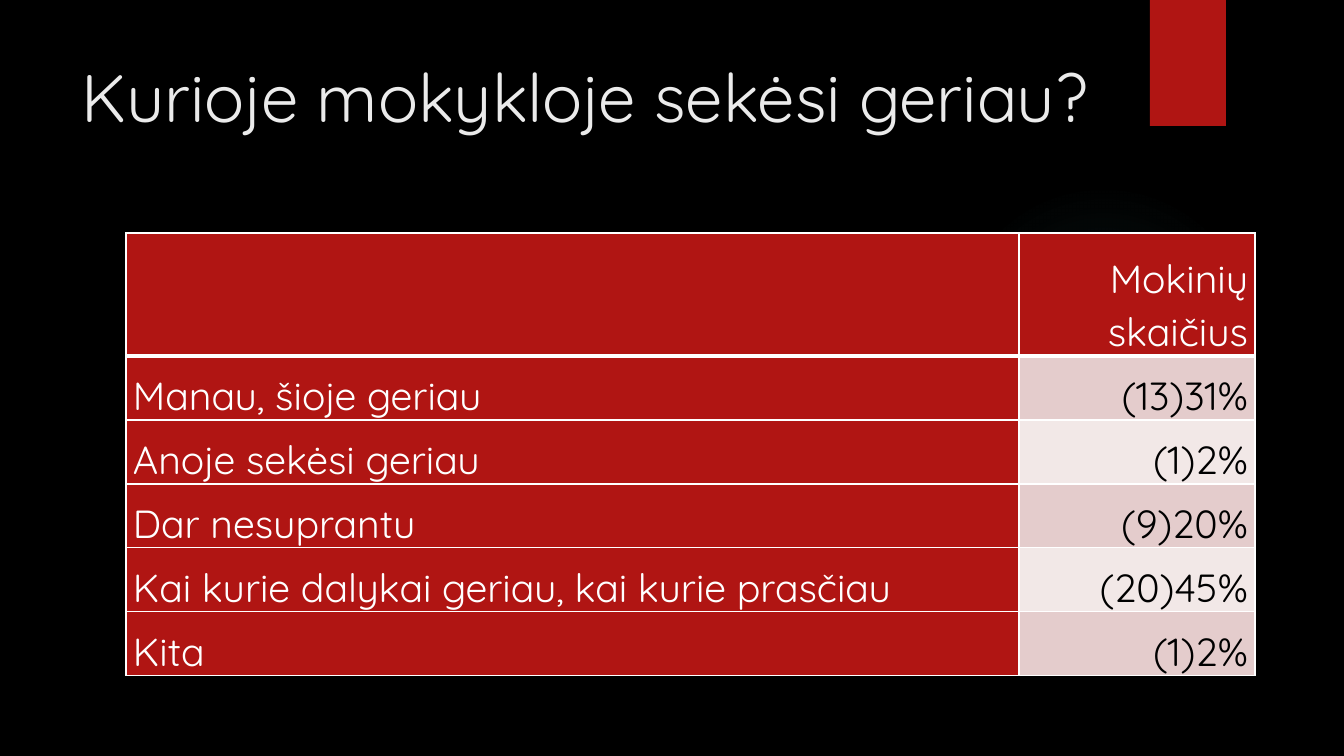
from dataclasses import dataclass

from lxml.etree import SubElement
from pptx import Presentation
from pptx.dml.color import RGBColor
from pptx.enum.shapes import MSO_SHAPE
from pptx.enum.text import MSO_ANCHOR, PP_ALIGN
from pptx.oxml import parse_xml
from pptx.oxml.ns import nsdecls, qn
from pptx.shapes.autoshape import Shape
from pptx.slide import Slide
from pptx.table import _Cell
from pptx.text.text import _Paragraph
from pptx.util import Emu, Pt

PX_PER_INCH = 100.8


@dataclass(frozen=True)
class Theme:
    font: str = "Quicksand"
    background: str = "000000"
    title: str = "EBEBEB"
    accent: str = "B01513"
    glow: str = "50B9C1"
    light: str = "FFFFFF"
    dark: str = "000000"
    bands: tuple[str, str] = ("E4CCCC", "F2E8E7")
    title_size: int = 48
    table_size: int = 28


@dataclass(frozen=True)
class Box:
    left: int
    top: int
    width: int
    height: int

    def emu(self) -> tuple[Emu, Emu, Emu, Emu]:
        return px(self.left), px(self.top), px(self.width), px(self.height)


@dataclass(frozen=True)
class Answer:
    label: str
    pupils: str


THEME = Theme()
GLOW = Box(949, 184, 310, 310)
RIBBON = Box(1150, 0, 76, 126)
TITLE = Box(72, 50, 1037, 154)
COLUMNS = (893, 236)
HEADER_HEIGHT, ROW_HEIGHT = 123, 64
CELL_INSET = 7
ANSWERS = (
    Answer("Manau, šioje geriau", "(13)31%"),
    Answer("Anoje sekėsi geriau", "(1)2%"),
    Answer("Dar nesuprantu", "(9)20%"),
    Answer("Kai kurie dalykai geriau, kai kurie prasčiau", "(20)45%"),
    Answer("Kita", "(1)2%"),
)
RESULTS = Box(126, 233, sum(COLUMNS), HEADER_HEIGHT + ROW_HEIGHT * len(ANSWERS))


def px(length: int) -> Emu:
    return Emu(round(length * 914400 / PX_PER_INCH))


def rgb(color: str) -> RGBColor:
    return RGBColor.from_string(color)


def style_text(paragraph: _Paragraph, size: int, color: str) -> None:
    for run in paragraph.runs:
        run.font.name = THEME.font
        run.font.size = Pt(size)
        run.font.color.rgb = rgb(color)


def add_plain_shape(slide: Slide, kind: MSO_SHAPE, box: Box) -> Shape:
    shape = slide.shapes.add_shape(kind, *box.emu())
    shape.shadow.inherit = False
    shape.line.fill.background()
    return shape


def add_glow(slide: Slide) -> None:
    glow = add_plain_shape(slide, MSO_SHAPE.OVAL, GLOW)
    stops = "".join(
        f'<a:gs pos="{position * 1000}"><a:srgbClr val="{THEME.glow}">'
        f'<a:alpha val="{alpha * 1000}"/></a:srgbClr></a:gs>'
        for position, alpha in ((0, 7), (36, 6), (69, 0), (100, 0))
    )
    gradient = parse_xml(
        f'<a:gradFill {nsdecls("a")}><a:gsLst>{stops}</a:gsLst><a:path path="circle">'
        '<a:fillToRect l="50000" t="50000" r="50000" b="50000"/></a:path></a:gradFill>'
    )
    glow._element.spPr.find(qn("a:prstGeom")).addnext(gradient)


def add_ribbon(slide: Slide) -> None:
    ribbon = add_plain_shape(slide, MSO_SHAPE.RECTANGLE, RIBBON)
    ribbon.fill.solid()
    ribbon.fill.fore_color.rgb = rgb(THEME.accent)
    effects = ribbon._element.spPr.find(qn("a:effectLst"))
    shadow = SubElement(
        effects, qn("a:outerShdw"),
        blurRad=str(Pt(3)), dist=str(Pt(2)), dir="5400000", rotWithShape="0",
    )
    shade = SubElement(shadow, qn("a:srgbClr"), val=THEME.dark)
    SubElement(shade, qn("a:alpha"), val="45000")


def add_title(slide: Slide) -> None:
    frame = slide.shapes.add_textbox(*TITLE.emu()).text_frame
    frame.word_wrap = True
    frame.text = "Kurioje mokykloje sekėsi geriau?"
    style_text(frame.paragraphs[0], THEME.title_size, THEME.title)


def add_borders(cell: _Cell, bottom_width: int) -> None:
    properties = cell._tc.get_or_add_tcPr()
    widths = {"lnL": 1, "lnR": 1, "lnT": 1, "lnB": bottom_width}
    for position, (side, width) in enumerate(widths.items()):
        border = parse_xml(
            f'<a:{side} {nsdecls("a")} w="{Pt(width)}"><a:solidFill>'
            f'<a:srgbClr val="{THEME.light}"/></a:solidFill></a:{side}>'
        )
        properties.insert(position, border)


def fill_cell(cell: _Cell, text: str, fill: str, color: str,
              align: PP_ALIGN, bottom_width: int) -> None:
    cell.fill.solid()
    cell.fill.fore_color.rgb = rgb(fill)
    cell.vertical_anchor = MSO_ANCHOR.BOTTOM
    cell.margin_left = cell.margin_right = px(CELL_INSET)
    cell.margin_top = cell.margin_bottom = 0
    add_borders(cell, bottom_width)
    if text:
        cell.text_frame.text = text
        paragraph = cell.text_frame.paragraphs[0]
        paragraph.alignment = align
        paragraph.line_spacing = 1.07
        paragraph.space_after = Pt(8)
        style_text(paragraph, THEME.table_size, color)


def add_results(slide: Slide) -> None:
    rows = (Answer("", "Mokinių skaičius"), *ANSWERS)
    table = slide.shapes.add_table(len(rows), len(COLUMNS), *RESULTS.emu()).table
    for column, width in zip(table.columns, COLUMNS):
        column.width = px(width)
    for index, answer in enumerate(rows):
        header = index == 0
        table.rows[index].height = px(HEADER_HEIGHT if header else ROW_HEIGHT)
        band = THEME.accent if header else THEME.bands[(index - 1) % 2]
        ink = THEME.light if header else THEME.dark
        bottom_width = 3 if header else 1
        fill_cell(table.cell(index, 0), answer.label, THEME.accent, THEME.light,
                  PP_ALIGN.LEFT, bottom_width)
        fill_cell(table.cell(index, 1), answer.pupils, band, ink,
                  PP_ALIGN.RIGHT, bottom_width)


def main() -> None:
    presentation = Presentation()
    presentation.slide_width, presentation.slide_height = px(1344), px(756)
    slide = presentation.slides.add_slide(presentation.slide_layouts[6])
    slide.background.fill.solid()
    slide.background.fill.fore_color.rgb = rgb(THEME.background)
    add_glow(slide)
    add_ribbon(slide)
    add_title(slide)
    add_results(slide)
    presentation.save("out.pptx")


if __name__ == "__main__":
    main()
